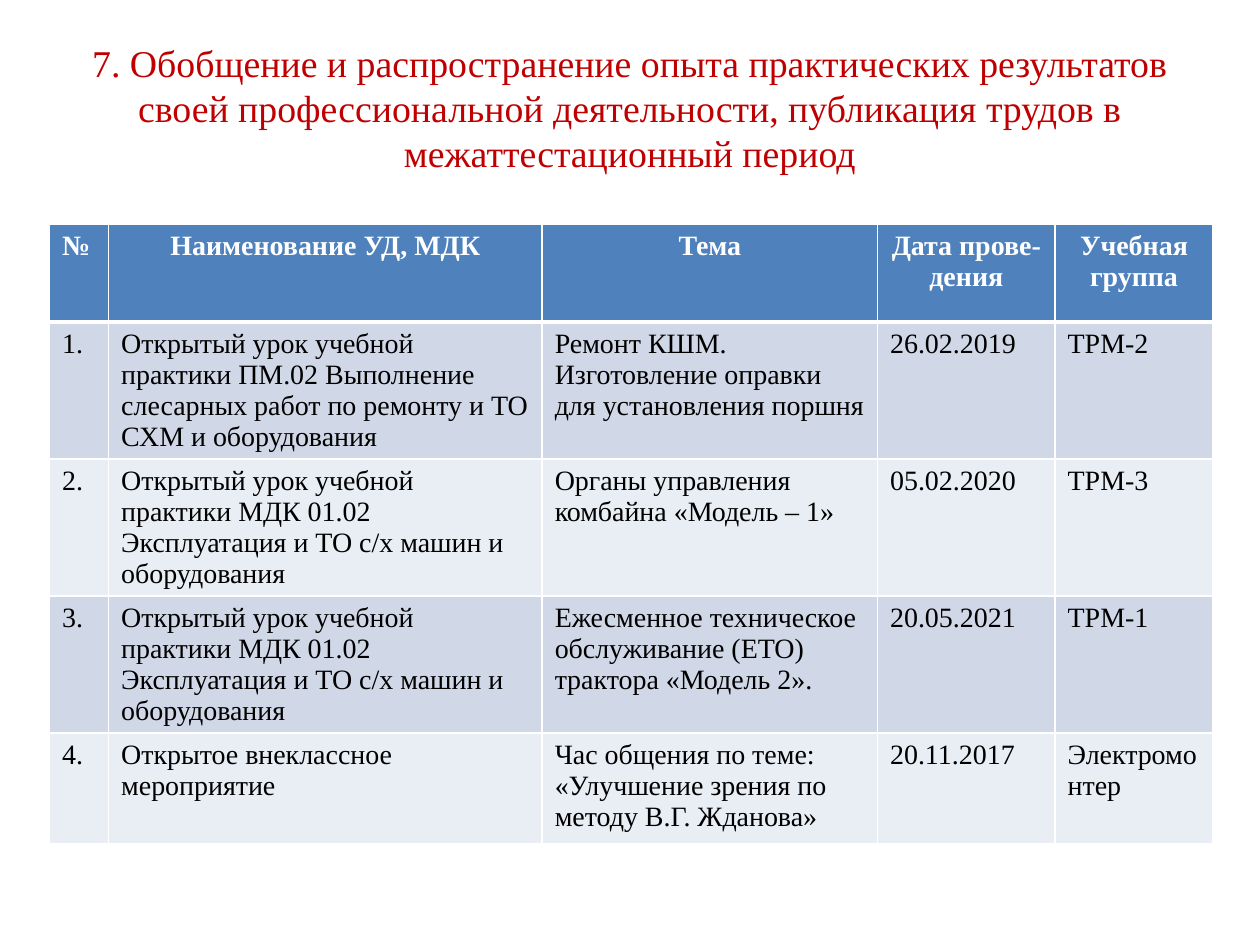
from lxml.etree import SubElement
from pptx import Presentation
from pptx.dml.color import RGBColor
from pptx.enum.text import MSO_ANCHOR, PP_ALIGN
from pptx.oxml.ns import qn
from pptx.util import Cm, Pt

COLORS = {
    "title": "C00000",
    "header": "4F81BD",
    "odd": "D0D8E8",
    "even": "E9EDF4",
    "line": "FFFFFF",
    "header_text": "FFFFFF",
    "body_text": "000000",
}
FONT = "Times New Roman"
TITLE = (
    "7. Обобщение и распространение опыта практических результатов "
    "своей профессиональной деятельности, публикация трудов в "
    "межаттестационный период"
)
HEADERS = ["№", "Наименование УД, МДК", "Тема", "Дата прове-\nдения", "Учебная группа"]
MACHINERY_LESSON = (
    "Открытый урок учебной практики МДК 01.02 "
    "Эксплуатация и ТО с/х машин и оборудования"
)
EVENTS = [
    ("Открытый урок учебной практики ПМ.02 Выполнение слесарных работ "
     "по ремонту и ТО СХМ и оборудования",
     "Ремонт КШМ. Изготовление оправки для установления поршня",
     "26.02.2019", "ТРМ-2"),
    (MACHINERY_LESSON, "Органы управления комбайна «Модель – 1»",
     "05.02.2020", "ТРМ-3"),
    (MACHINERY_LESSON,
     "Ежесменное техническое обслуживание (ЕТО) трактора «Модель 2».",
     "20.05.2021", "ТРМ-1"),
    ("Открытое внеклассное мероприятие",
     "Час общения по теме: «Улучшение зрения по методу В.Г. Жданова»",
     "20.11.2017", "Электромонтер"),
]
COLUMN_WIDTHS = [1.19, 8.74, 6.76, 3.58, 3.18]
ROW_HEIGHTS = [1.97, 2.76, 2.76, 2.76, 2.23]


def format_paragraph(paragraph, color, alignment, **font_values):
    paragraph.alignment = alignment
    for name, value in {"name": FONT, **font_values}.items():
        setattr(paragraph.font, name, value)
    paragraph.font.color.rgb = RGBColor.from_string(COLORS[color])


def set_borders(cell, bottom_width):
    properties = cell._tc.get_or_add_tcPr()
    widths = {"a:lnL": 1, "a:lnR": 1, "a:lnT": 1, "a:lnB": bottom_width}
    for tag, width in widths.items():
        line = SubElement(properties, qn(tag), w=str(Pt(width)))
        fill = SubElement(line, qn("a:solidFill"))
        SubElement(fill, qn("a:srgbClr"), val=COLORS["line"])


def add_title(slide, left, top, width, height):
    title = slide.shapes.title
    box = {"left": left, "top": top, "width": width, "height": height}
    for name, value in box.items():
        setattr(title, name, Cm(value))
    frame = title.text_frame
    frame.text = TITLE
    frame.word_wrap = True
    frame.vertical_anchor = MSO_ANCHOR.MIDDLE
    frame.margin_bottom = Cm(0.7)
    paragraph = frame.paragraphs[0]
    paragraph.line_spacing = Pt(25.7)
    format_paragraph(paragraph, "title", PP_ALIGN.CENTER, size=Pt(21.6))


def fill_cell(cell, text, row, column):
    is_header = row == 0
    set_borders(cell, 3 if is_header else 1)
    fill_color = "header" if is_header else "odd" if row % 2 else "even"
    cell.fill.solid()
    cell.fill.fore_color.rgb = RGBColor.from_string(COLORS[fill_color])
    cell.text = text
    alignment = PP_ALIGN.CENTER if is_header and column else PP_ALIGN.LEFT
    text_color = "header_text" if is_header else "body_text"
    for paragraph in cell.text_frame.paragraphs:
        format_paragraph(paragraph, text_color, alignment, size=Pt(16), bold=is_header)


def add_events_table(slide, left, top):
    rows = [HEADERS] + [
        (f"{number}.", *event) for number, event in enumerate(EVENTS, 1)
    ]
    table = slide.shapes.add_table(
        len(rows), len(HEADERS), Cm(left), Cm(top),
        Cm(sum(COLUMN_WIDTHS)), Cm(sum(ROW_HEIGHTS)),
    ).table
    for column, width in zip(table.columns, COLUMN_WIDTHS):
        column.width = Cm(width)
    for row, height in zip(table.rows, ROW_HEIGHTS):
        row.height = Cm(height)
    for row_index, texts in enumerate(rows):
        for column_index, text in enumerate(texts):
            fill_cell(table.cell(row_index, column_index), text, row_index, column_index)


def main():
    presentation = Presentation()
    presentation.slide_width = Cm(25.4)
    presentation.slide_height = Cm(19.05)
    slide = presentation.slides.add_slide(presentation.slide_layouts[5])
    add_title(slide, 1.27, 0.76, 22.86, 3.4)
    add_events_table(slide, 1, 4.52)
    presentation.save("out.pptx")


if __name__ == "__main__":
    main()
